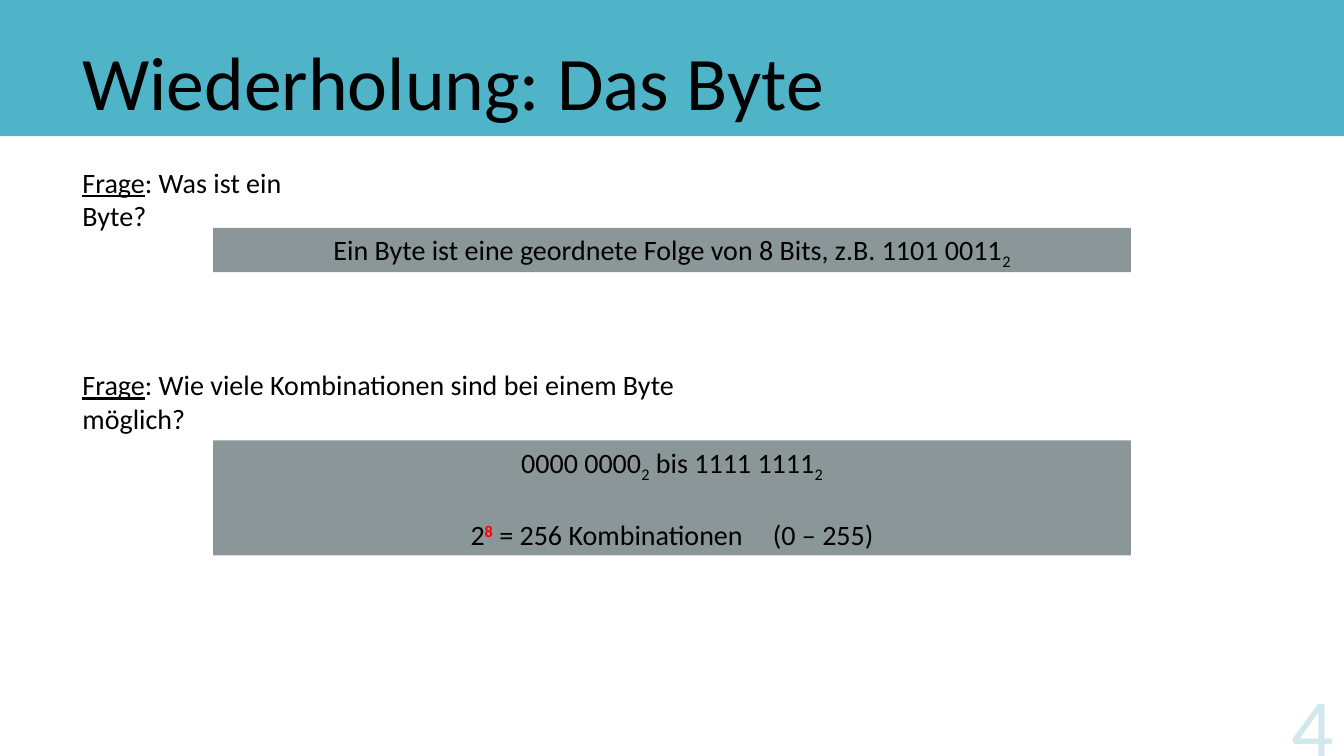
import pptx
import pptx.dml.color
import pptx.enum.shapes
import pptx.enum.text
import pptx.oxml
import pptx.oxml.ns
import pptx.util

COLORS = {
    "banner": "50B4C8",
    "answer": "162F33",
    "text": "000000",
    "accent": "FF0000",
    "number": "D0E8EE",
}
FONT = "Calibri"
BODY_SIZE = 20
LINE_GAP = 24.4
MARGIN = 5.4
LINE_HEIGHT = 5.87
ANSWER_WIDTH = 68.27
ALIGN = pptx.enum.text.PP_ALIGN
ANCHOR = pptx.enum.text.MSO_ANCHOR

deck = pptx.Presentation()
deck.slide_width = pptx.util.Inches(13.33)
deck.slide_height = pptx.util.Inches(7.5)


def share(left, top, width, height):
    across, down = deck.slide_width / 100, deck.slide_height / 100
    return [round(v) for v in (left * across, top * down, width * across, height * down)]


def rgb(name):
    return pptx.dml.color.RGBColor.from_string(COLORS[name])


def add_run(paragraph, words, size, color="text", underline=False, bold=False, baseline=0):
    run = paragraph.add_run()
    run.text = words
    font = run.font
    font.name, font.size = FONT, pptx.util.Pt(size)
    font.underline, font.bold = underline, bold
    font.color.rgb = rgb(color)
    if baseline:
        font._element.set("baseline", str(baseline * 1000))


def add_textbox(slide, box):
    frame = slide.shapes.add_textbox(*share(*box)).text_frame
    frame.word_wrap = True
    return frame


def add_panel(slide, box, color):
    panel = slide.shapes.add_shape(pptx.enum.shapes.MSO_SHAPE.RECTANGLE, *share(*box))
    panel.shadow.inherit = False
    panel.fill.solid()
    panel.fill.fore_color.rgb = rgb(color)
    panel.line.fill.background()
    return panel


def add_header(slide, box, title):
    left, top, width, height = box
    add_panel(slide, box, "banner")
    frame = add_textbox(slide, (left + MARGIN, top + 3.2, 88.37, height - 3.2))
    frame.vertical_anchor = ANCHOR.MIDDLE
    add_run(frame.paragraphs[0], title, 54)


def add_question(slide, box, question, question_width, answer_height, answer_lines):
    left, top, width, height = box
    question_frame = add_textbox(slide, (left, top, question_width, LINE_HEIGHT))
    add_run(question_frame.paragraphs[0], "Frage", BODY_SIZE, underline=True)
    add_run(question_frame.paragraphs[0], ": " + question, BODY_SIZE)

    answer_box = (left + (width - ANSWER_WIDTH) / 2, top + height - answer_height,
                  ANSWER_WIDTH, answer_height)
    answer = add_panel(slide, answer_box, "answer")
    tint = answer.fill._xPr.find(".//" + pptx.oxml.ns.qn("a:srgbClr"))
    tint.append(pptx.oxml.parse_xml(
        f'<a:alpha {pptx.oxml.ns.nsdecls("a")} val="50000"/>'))
    frame = answer.text_frame
    frame.word_wrap = True
    frame.vertical_anchor = ANCHOR.TOP
    for index, parts in enumerate(answer_lines):
        paragraph = frame.add_paragraph() if index else frame.paragraphs[0]
        paragraph.alignment = ALIGN.CENTER
        paragraph.space_before = pptx.util.Pt(LINE_GAP if index else 0)
        for words, style in parts:
            add_run(paragraph, words, BODY_SIZE, **style)


def add_page_number(slide, box, number):
    frame = add_textbox(slide, box)
    frame.margin_left = frame.margin_right = frame.margin_top = frame.margin_bottom = 0
    frame.paragraphs[0].alignment = ALIGN.RIGHT
    add_run(frame.paragraphs[0], number, 60, "number")


def main():
    slide = deck.slides.add_slide(deck.slide_layouts[6])
    plain = {}
    subscript = {"baseline": -25}
    exponent = {"baseline": 30, "color": "accent", "bold": True}
    content_width = 100 - 2 * MARGIN

    add_header(slide, (0, 0, 100, 18), "Wiederholung: Das Byte")
    add_question(
        slide, (MARGIN, 21.2, content_width, 14.8), "Was ist ein Byte?", 21, LINE_HEIGHT,
        [[("Ein Byte ist eine geordnete Folge von 8 Bits, z.B. 1101 0011", plain),
          ("2", subscript)]])
    add_question(
        slide, (MARGIN, 48, content_width, 25.47),
        "Wie viele Kombinationen sind bei einem Byte möglich?", 52.5, 15.2,
        [[("0000 0000", plain), ("2", subscript),
          (" bis 1111 1111", plain), ("2", subscript)],
         [("2", plain), ("8", exponent), (" = 256 Kombinationen \t(0 – 255)", plain)]])
    add_page_number(slide, (93, 89.2, 6.25, 10.8), "4")
    deck.save("out.pptx")


if __name__ == "__main__":
    main()
